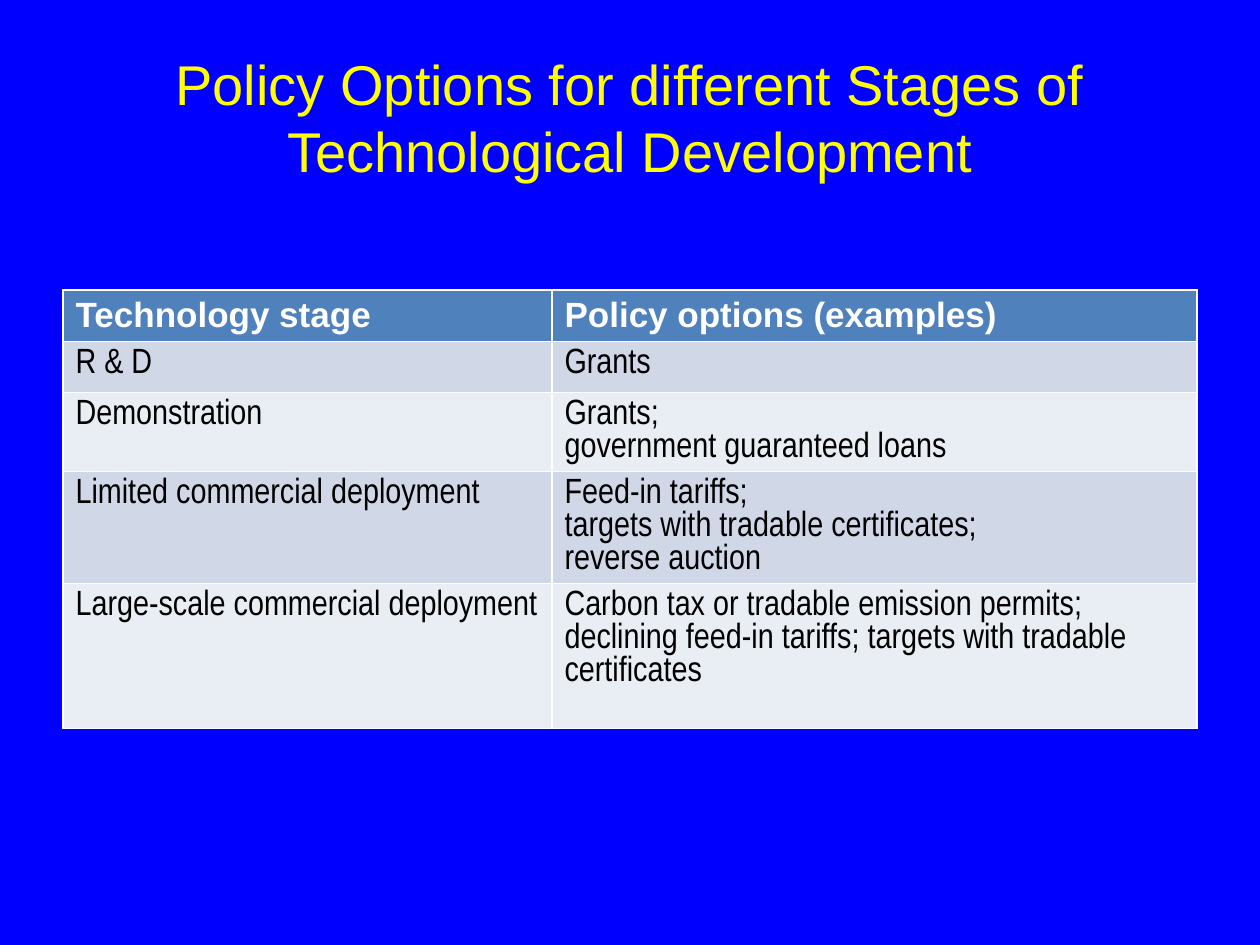
from pptx import Presentation
from pptx.dml.color import RGBColor
from pptx.enum.text import MSO_ANCHOR, PP_ALIGN
from pptx.util import Emu, Pt

COLORS = {
    "background": "0000FF",
    "title": "FFFF00",
    "header": "4F81BD",
    "header_text": "FFFFFF",
    "odd_row": "D0D8E8",
    "even_row": "E9EDF4",
    "body_text": "000000",
}
STAGES = [
    ("Technology stage", "Policy options (examples)"),
    ("R & D", "Grants"),
    ("Demonstration", "Grants;\vgovernment guaranteed loans"),
    ("Limited commercial deployment",
     "Feed-in tariffs;\vtargets with tradable certificates;\nreverse auction"),
    ("Large-scale commercial deployment",
     "Carbon tax or tradable emission permits;\n"
     "declining feed-in tariffs; targets with tradable certificates"),
]
COLUMN_WIDTHS = [489, 645]
ROW_HEIGHTS = [51, 51, 78, 112, 145]


def px(length):
    """Turn px, at 126 to the inch, into EMU."""
    return Emu(round(length * 914400 / 126))


def format_text(frame, font_name, size, color, bold=False):
    for para in frame.paragraphs:
        for span in para.runs:
            span.font.name = font_name
            span.font.size = Pt(size)
            span.font.bold = bold
            span.font.color.rgb = RGBColor.from_string(COLORS[color])


deck = Presentation()
deck.slide_width, deck.slide_height = px(1260), px(945)
page = deck.slides.add_slide(deck.slide_layouts[5])
page.background.fill.solid()
page.background.fill.fore_color.rgb = RGBColor.from_string(COLORS["background"])

title = page.shapes.title
title.left, title.top, title.width, title.height = px(63), px(38), px(1134), px(158)
title.text_frame.text = "Policy Options for different Stages of Technological Development"
title.text_frame.vertical_anchor = MSO_ANCHOR.MIDDLE
title.text_frame.paragraphs[0].alignment = PP_ALIGN.CENTER
format_text(title.text_frame, "Arial", 32, "title")

# The default table style supplies the white borders and the thick header rule.
table = page.shapes.add_table(
    len(STAGES), len(COLUMN_WIDTHS), px(63), px(290),
    px(sum(COLUMN_WIDTHS)), px(sum(ROW_HEIGHTS))).table
for column, width in zip(table.columns, COLUMN_WIDTHS):
    column.width = px(width)

for row_index, (texts, height) in enumerate(zip(STAGES, ROW_HEIGHTS)):
    table.rows[row_index].height = px(height)
    is_header = row_index == 0
    fill_name = "header" if is_header else ("even_row", "odd_row")[row_index % 2]
    for cell, text in zip(table.rows[row_index].cells, texts):
        cell.fill.solid()
        cell.fill.fore_color.rgb = RGBColor.from_string(COLORS[fill_name])
        cell.text_frame.text = text
        if is_header:
            format_text(cell.text_frame, "Arial", 20, "header_text", bold=True)
        else:
            format_text(cell.text_frame, "Arial Narrow", 20, "body_text")

deck.save("out.pptx")
